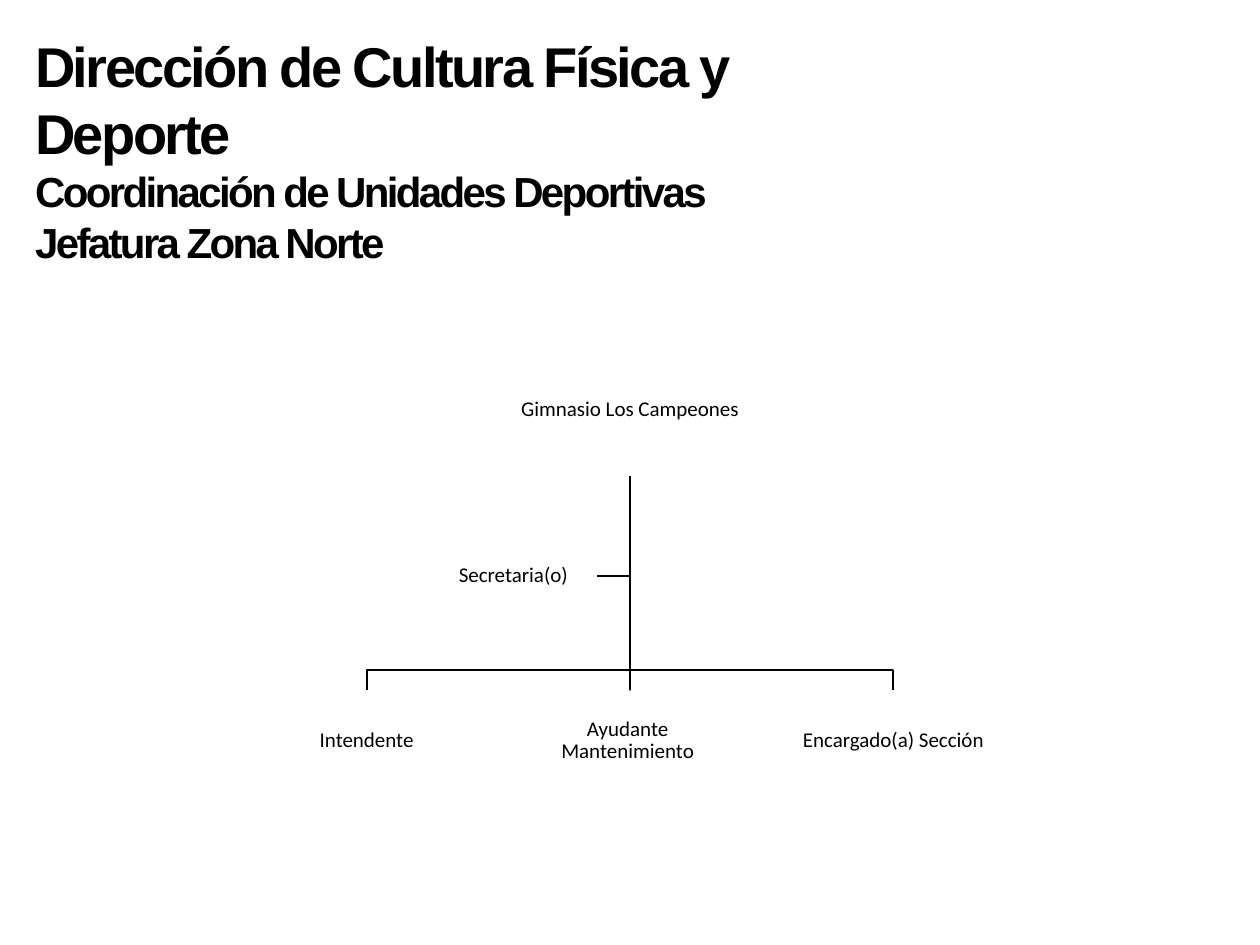
from lxml import etree
from pptx import Presentation
from pptx import util as u
from pptx.dml.color import RGBColor
from pptx.enum import shapes, text
from pptx.oxml.ns import qn

HEADING = [
    ("Dirección de Cultura Física y Deporte", 32),
    ("Coordinación de Unidades Deportivas", 24),
    ("Jefatura Zona Norte", 24),
]
HEAD = "Gimnasio Los Campeones"
ASSISTANT = "Secretaria(o)"
STAFF = ["Intendente", "Ayudante \vMantenimiento ", "Encargado(a) Sección"]
COLORS = {"ink": "000000", "paper": "FFFFFF"}

W, H = 10, 7.5
CENTER = W / 2
PITCH = 2.09
HEAD_TOP, HEAD_W, HEAD_H = 2.73, 2.05, 1.05
STAFF_TOP, STAFF_W, STAFF_H = 5.48, 1.75, 0.8
ASSIST_LEFT, ASSIST_TOP, ASSIST_W, ASSIST_H = 3.41, 4.21, 1.33, 0.72
BUS_Y = 5.32


def rgb(name):
    return RGBColor.from_string(COLORS[name])


def write(p, value, size=12, font="Calibri", bold=False, align=None,
          leading=None, tracking=None):
    p.text = value
    p.alignment = align
    p.line_spacing = leading
    for r in p.runs:
        r.font.size, r.font.name, r.font.bold = u.Pt(size), font, bold
        r.font.color.rgb = rgb("ink")
        if tracking is not None:
            r._r.get_or_add_rPr().set("spc", str(round(tracking * 100)))


def add_box(s, value, x, y, w, h, filled=True):
    sp = s.shapes.add_shape(shapes.MSO_SHAPE.RECTANGLE, *map(u.Inches, (x, y, w, h)))
    sp.shadow.inherit = False
    sp.line.fill.background()
    if filled:
        sp.fill.solid()
        sp.fill.fore_color.rgb = rgb("paper")
    else:
        sp.fill.background()
    tf = sp.text_frame
    tf.word_wrap = True
    tf.vertical_anchor = text.MSO_ANCHOR.MIDDLE
    tf.margin_left = tf.margin_right = tf.margin_top = tf.margin_bottom = u.Inches(0.01)
    write(tf.paragraphs[0], value, align=text.PP_ALIGN.CENTER, leading=0.9)
    return sp


def style_line(sp):
    sp.line.color.rgb = rgb("ink")
    sp.line.width = u.Pt(1)


def add_elbow(s, points):
    first, *rest = [(u.Inches(x), u.Inches(y)) for x, y in points]
    fb = s.shapes.build_freeform(*first)
    fb.add_line_segments(rest, close=False)
    sp = fb.convert_to_shape()
    sp.shadow.inherit = False
    sp.fill.background()
    style_line(sp)


prs = Presentation()
prs.slide_width, prs.slide_height = u.Inches(W), u.Inches(H)
s = prs.slides.add_slide(prs.slide_layouts[6])

tf = s.shapes.add_textbox(*map(u.Inches, (0.18, 0.2, 7.21, 1.99))).text_frame
tf.word_wrap = True
for i, (value, size) in enumerate(HEADING):
    p = tf.add_paragraph() if i else tf.paragraphs[0]
    write(p, value, size=size, font="Arial", bold=True, tracking=-1.5)

head = add_box(s, HEAD, CENTER - HEAD_W / 2, HEAD_TOP, HEAD_W, HEAD_H, filled=False)
add_box(s, ASSISTANT, ASSIST_LEFT, ASSIST_TOP, ASSIST_W, ASSIST_H)
start = (CENTER, HEAD_TOP + HEAD_H)
assist_y = ASSIST_TOP + ASSIST_H / 2
add_elbow(s, [start, (CENTER, assist_y), (ASSIST_LEFT + ASSIST_W, assist_y)])

for i, value in enumerate(STAFF):
    x = CENTER + (i - (len(STAFF) - 1) / 2) * PITCH
    box = add_box(s, value, x - STAFF_W / 2, STAFF_TOP, STAFF_W, STAFF_H)
    if x == CENTER:
        trunk = s.shapes.add_connector(shapes.MSO_CONNECTOR.STRAIGHT, 0, 0, 0, 0)
        trunk.begin_connect(head, 2)
        trunk.end_connect(box, 0)
        style_line(trunk)
        etree.SubElement(trunk._element.spPr, qn("a:effectLst"))
    else:
        add_elbow(s, [start, (CENTER, BUS_Y), (x, BUS_Y), (x, STAFF_TOP)])

prs.save("out.pptx")
